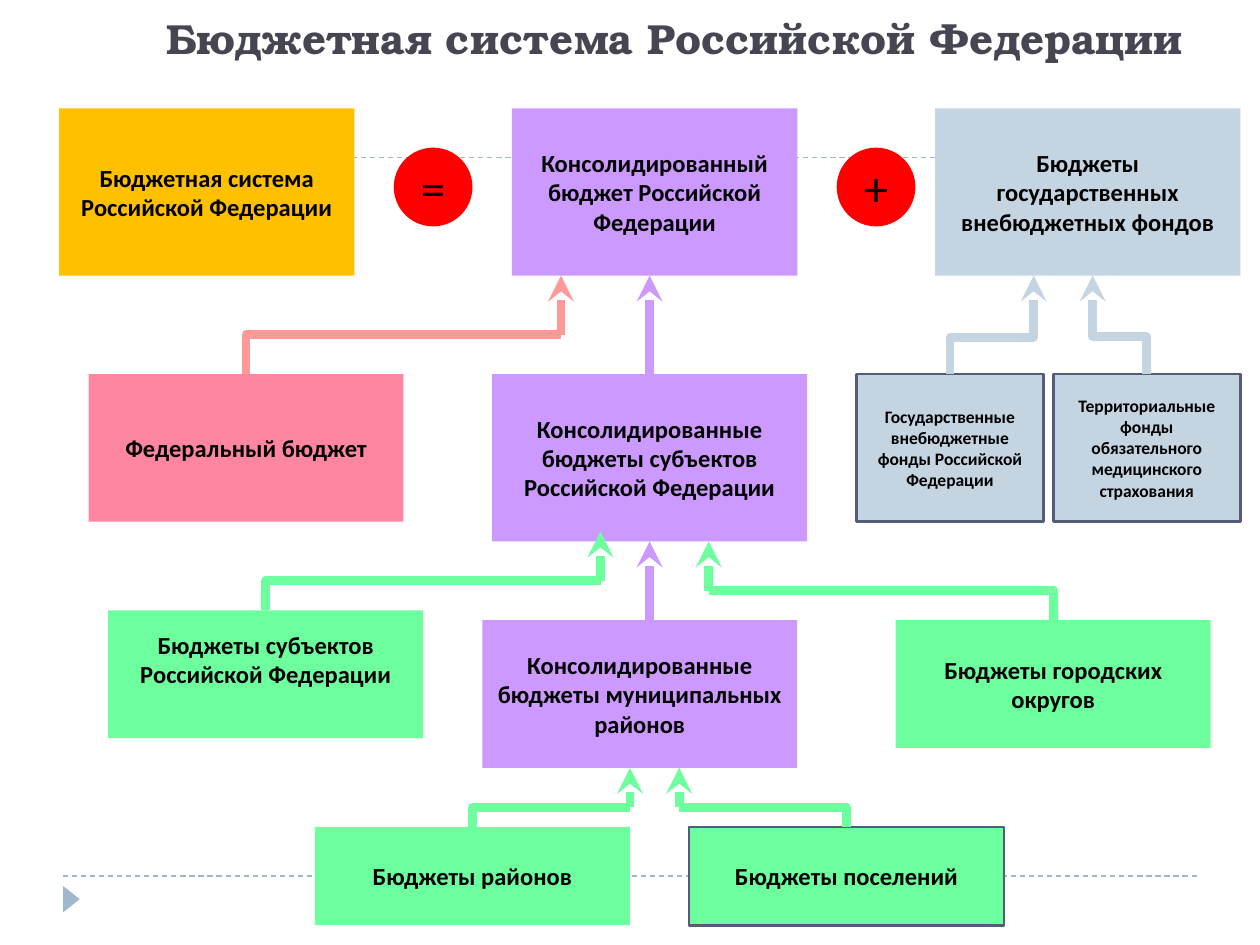
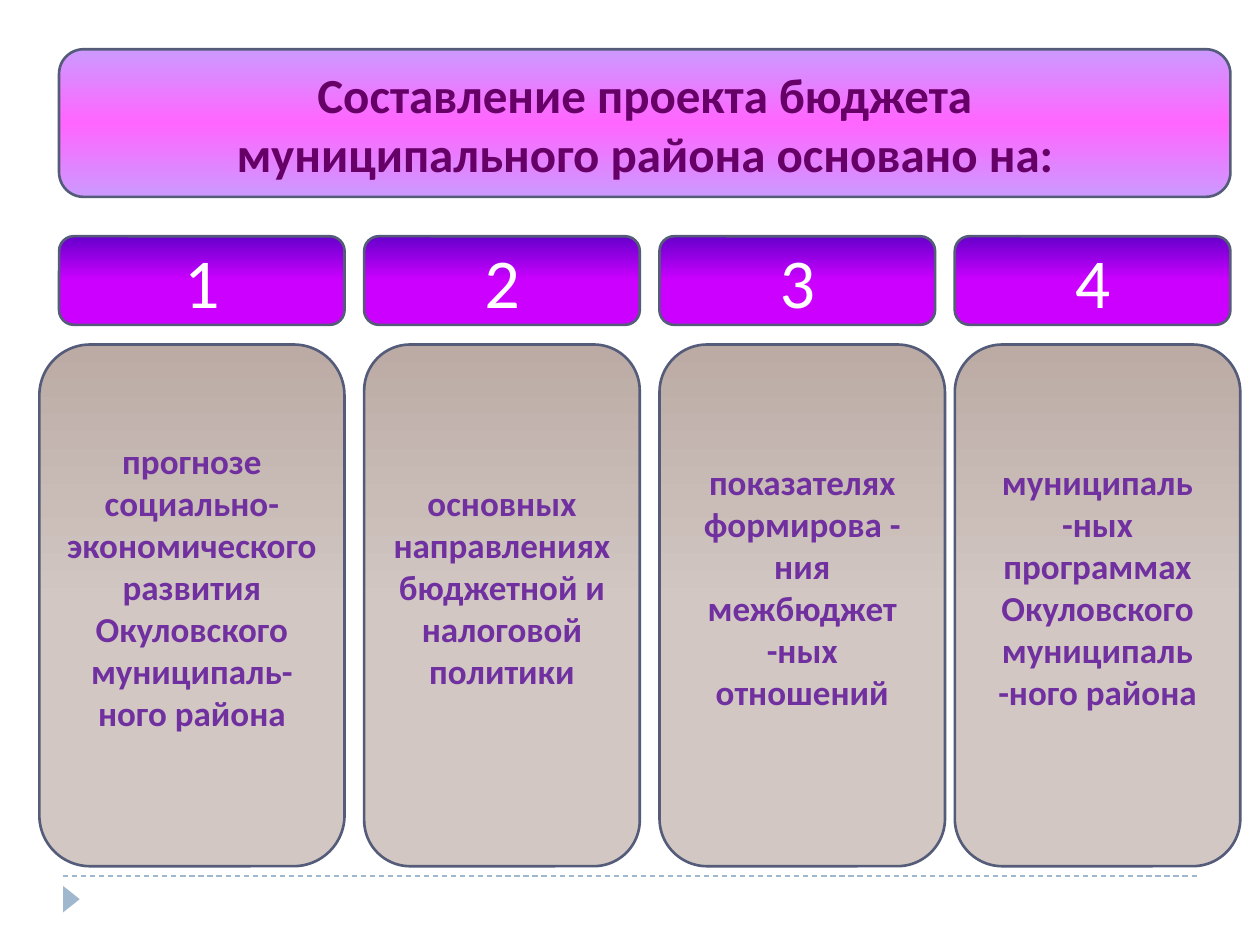
"""Builds two slides on the budget system: its structure and the basis of a draft budget."""
from lxml.etree import SubElement
from pptx import Presentation
from pptx.dml.color import RGBColor
from pptx.enum.dml import MSO_LINE_DASH_STYLE as Dash
from pptx.enum.shapes import MSO_CONNECTOR as Link, MSO_SHAPE as Shape
from pptx.enum.text import MSO_ANCHOR as Anchor, PP_ALIGN as Align
from pptx.oxml.ns import qn
from pptx.util import Inches, Pt

WIDTH, HEIGHT = Inches(10), Inches(7.5)
COLUMNS = 128
CELL = WIDTH / COLUMNS

COLORS = {
    "white": "FFFFFF", "black": "000000", "title": "464653", "rule": "9FB8CD",
    "outline": "545C79", "gold": "FFC000", "violet": "CC99FF", "steel": "C5D4E1",
    "pink": "FE86A0", "salmon": "FF9999", "green": "6DFF9E", "red": "FF0000",
    "magenta": "FF66FF", "plum": "660066", "indigo": "6600CC", "fuchsia": "CC00FF",
    "taupe": "BCABA5", "sand": "D2C7C3", "purple": "7030A0",
}
BANNER_FILL = [(0, "violet"), (50, "magenta"), (100, "violet")]
NUMBER_FILL = [(0, "indigo"), (50, "fuchsia")]
PANEL_FILL = [(0, "taupe"), (50, "sand")]

SYSTEM_TITLE = "Бюджетная система Российской Федерации"
BUDGETS = [
    ("Бюджетная система Российской Федерации", (6, 11, 30, 17), "gold", {}),
    ("Консолидированный бюджет Российской Федерации", (52, 11, 29, 17), "violet", {}),
    ("Бюджеты государственных внебюджетных фондов", (95, 11, 31, 17), "steel", {}),
    ("Федеральный бюджет", (9, 38, 32, 15), "pink", {}),
    ("Консолидированные бюджеты субъектов Российской Федерации",
     (50, 38, 32, 17), "violet", {}),
    ("Бюджеты субъектов Российской Федерации", (11, 62, 32, 13), "green",
     {"spare": 0.24}),
    ("Консолидированные бюджеты муниципальных районов", (49, 63, 32, 15), "violet", {}),
    ("Бюджеты районов", (32, 84, 32, 10), "green", {}),
    ("Бюджеты поселений", (70, 84, 32, 10), "green", {"outline": True}),
    ("Государственные внебюджетные фонды Российской Федерации",
     (87, 38, 19, 15), "steel", {"outline": True, "size": 10}),
    ("Территориальные фонды обязательного медицинского страхования",
     (107, 38, 19, 15), "steel", {"outline": True, "size": 10}),
    ("Бюджеты городских округов", (91, 63, 32, 13), "green", {}),
]
SIGNS = [("=", 40), ("+", 85)]
RISES = [((66, 38), (66, 28), "violet"), ((66, 63), (66, 55), "violet")]
TURNS = [
    ((48, 84), (64, 82), 78, "green"),
    ((86, 84), (69, 82), 78, "green"),
    ((27, 62), (61, 59), 54, "green"),
    ((107, 63), (72, 60), 55, "green"),
    ((25, 38), (57, 34), 28, "salmon"),
]
STEPS = [((116.5, 38), (111, 28), 0.38, "steel"), ((96.5, 38), (105, 28), 0.37, "steel")]

DRAFT_TITLE = "Составление проекта бюджета\nмуниципального района основано на:"
BASES = [
    ("прогнозе социально-экономического развития Окуловского муниципаль-ного района",
     (6, 29), (4, 31)),
    ("основных направлениях бюджетной и налоговой политики", (37, 28), (37, 28)),
    ("показателях формирова - ния межбюджет -ных отношений", (67, 28), (67, 29)),
    ("муниципаль -ных программах Окуловского муниципаль -ного района",
     (97, 28), (97, 29)),
]


def rgb(color):
    return RGBColor.from_string(COLORS[color])


def cells(*counts):
    return [round(count * CELL) for count in counts]


def write(frame, text, size=14, color="black", bold=True, font="Calibri",
          anchor=Anchor.MIDDLE, spare=0):
    frame.word_wrap = True
    frame.vertical_anchor = anchor
    frame.margin_bottom = Inches(0.05 + spare)
    frame.text = text
    for paragraph in frame.paragraphs:
        paragraph.alignment = Align.CENTER
        style = paragraph.font
        style.size, style.bold, style.name = Pt(size), bold, font
        style.color.rgb = rgb(color)


def paint(shape, fill):
    if isinstance(fill, str):
        shape.fill.solid()
        shape.fill.fore_color.rgb = rgb(fill)
        return
    shape.fill.gradient()
    shape.fill.gradient_angle = 270
    stops = shape._element.spPr.find(".//" + qn("a:gsLst"))
    stops.clear()
    for position, color in fill:
        stop = SubElement(stops, qn("a:gs"), pos=str(position * 1000))
        SubElement(stop, qn("a:srgbClr"), val=COLORS[color])


def add_block(slide, kind, place, fill, text="", outline=False, **style):
    block = slide.shapes.add_shape(kind, *cells(*place))
    block.shadow.inherit = False
    paint(block, fill)
    if outline:
        block.line.color.rgb = rgb("outline")
        block.line.width = Pt(1.5)
    else:
        block.line.fill.background()
    if text:
        write(block.text_frame, text, **style)
    return block


def add_line(slide, start, end, color, width=5, kind=Link.STRAIGHT, arrow=False):
    line = slide.shapes.add_connector(kind, *cells(*start, *end))
    line.line.color.rgb = rgb(color)
    line.line.width = Pt(width)
    SubElement(line._element.spPr, qn("a:effectLst"))
    if arrow:
        SubElement(line.line._get_or_add_ln(), qn("a:tailEnd"), type="stealth")
    return line


def add_elbow(slide, start, end, color, bend=None, arrow=False):
    (x1, y1), (x2, y2) = start, end
    middle_x, middle_y = (x1 + x2) / 2, (y1 + y2) / 2
    half_run, half_rise = abs(x2 - x1) / 2, abs(y2 - y1) / 2
    elbow = add_line(slide, (middle_x - half_rise, middle_y - half_run),
                     (middle_x + half_rise, middle_y + half_run),
                     color, kind=Link.ELBOW, arrow=arrow)
    frame = elbow._element.spPr.find(qn("a:xfrm"))
    frame.set("flipV", "1")
    if x2 > x1:
        frame.set("flipH", "1")
    elbow.rotation = 90 if x2 > x1 else 270
    outline = elbow._element.spPr.find(qn("a:prstGeom"))
    if bend is None:
        outline.set("prst", "bentConnector2")
    else:
        SubElement(outline.find(qn("a:avLst")), qn("a:gd"), name="adj1",
                   fmla=f"val {round(bend * 100000)}")


def add_page(deck, layout):
    slide = deck.slides.add_slide(deck.slide_layouts.get_by_name(layout))
    for row in (89, 16):
        rule = add_line(slide, (6.4, row), (121.6, row), "rule", width=0.75)
        rule.line.dash_style = Dash.DASH
    marker = add_block(slide, Shape.ISOSCELES_TRIANGLE, (5.9, 90.5, 2.7, 1.7), "rule")
    marker.rotation = 90
    return slide


def build_system(deck):
    slide = add_page(deck, "Title Only")
    title = slide.shapes.title
    title.left, title.top, title.width, title.height = cells(9, 0, 119, 7)
    write(title.text_frame, SYSTEM_TITLE, size=24, color="title",
          font="TeX Gyre Bonum", anchor=Anchor.BOTTOM)
    for name, place, fill, style in BUDGETS:
        add_block(slide, Shape.RECTANGLE, place, fill, name, **style)
    for sign, column in SIGNS:
        add_block(slide, Shape.OVAL, (column, 15, 8, 8), "red", sign, size=28, bold=False)
    for start, end, color in RISES:
        add_line(slide, start, end, color, arrow=True)
    for start, corner, tip_row, color in TURNS:
        add_elbow(slide, start, corner, color)
        add_line(slide, corner, (corner[0], tip_row), color, arrow=True)
    for start, end, bend, color in STEPS:
        add_elbow(slide, start, end, color, bend=bend, arrow=True)


def build_draft(deck):
    slide = add_page(deck, "Blank")
    add_block(slide, Shape.ROUNDED_RECTANGLE, (6, 5, 119, 15), BANNER_FILL,
              DRAFT_TITLE, outline=True, size=28, color="plum")
    for number, (basis, tab, panel) in enumerate(BASES, 1):
        add_block(slide, Shape.ROUNDED_RECTANGLE, (tab[0], 24, tab[1], 9), NUMBER_FILL,
                  str(number), outline=True, size=40, color="white", bold=False)
        add_block(slide, Shape.ROUNDED_RECTANGLE, (panel[0], 35, panel[1], 53), PANEL_FILL,
                  basis, outline=True, size=20, color="purple", spare=0.3)


def main():
    deck = Presentation()
    deck.slide_width, deck.slide_height = WIDTH, HEIGHT
    build_system(deck)
    build_draft(deck)
    deck.save("out.pptx")


if __name__ == "__main__":
    main()
